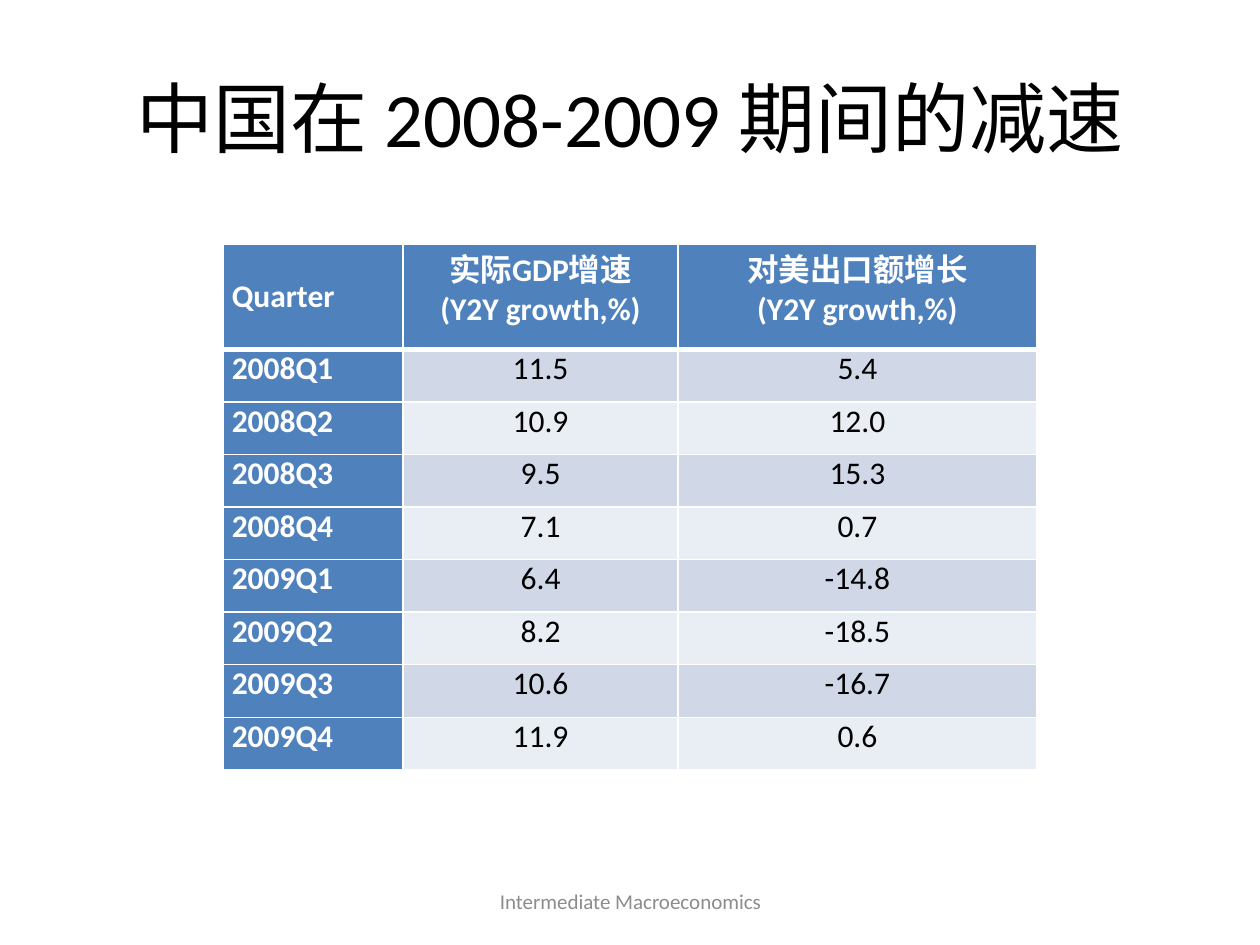
import pptx
import pptx.dml.color
import pptx.enum.text
import pptx.oxml
import pptx.oxml.ns
import pptx.util

Inches = pptx.util.Inches
Align = pptx.enum.text.PP_ALIGN
Anchor = pptx.enum.text.MSO_ANCHOR

HEADER_BLUE = "4F81BD"
BANDS = ["D0D8E8", "E9EDF4"]
WHITE = "FFFFFF"
BLACK = "000000"

HEADINGS = ["Quarter", "实际GDP增速\n(Y2Y growth,%)", "对美出口额增长\n(Y2Y growth,%)"]
GROWTH = [
    ("2008Q1", 11.5, 5.4),
    ("2008Q2", 10.9, 12.0),
    ("2008Q3", 9.5, 15.3),
    ("2008Q4", 7.1, 0.7),
    ("2009Q1", 6.4, -14.8),
    ("2009Q2", 8.2, -18.5),
    ("2009Q3", 10.6, -16.7),
    ("2009Q4", 11.9, 0.6),
]


def rgb(color):
    return pptx.dml.color.RGBColor.from_string(color)


def write_text(frame, text, size=18, color=BLACK, bold=False, align=Align.CENTER):
    """Write one paragraph for each line of the text."""
    frame.word_wrap = True
    for index, line in enumerate(text.split("\n")):
        paragraph = frame.paragraphs[0] if index == 0 else frame.add_paragraph()
        paragraph.alignment = align
        run = paragraph.add_run()
        run.text = line
        run.font.name = "Calibri"
        run.font.size = pptx.util.Pt(size)
        run.font.bold = bold
        run.font.color.rgb = rgb(color)


def add_line_of_text(slide, box, text, **text_format):
    frame = slide.shapes.add_textbox(*box).text_frame
    frame.vertical_anchor = Anchor.MIDDLE
    write_text(frame, text, **text_format)


def set_borders(cell, top=1, bottom=1):
    """Draw white cell borders; widths are in points."""
    properties = cell._tc.get_or_add_tcPr()
    for side, width in (("L", 1), ("R", 1), ("T", top), ("B", bottom)):
        properties.append(pptx.oxml.parse_xml(
            f'<a:ln{side} {pptx.oxml.ns.nsdecls("a")} w="{pptx.util.Pt(width)}">'
            f'<a:solidFill><a:srgbClr val="{WHITE}"/></a:solidFill></a:ln{side}>'))


def add_growth_table(slide, box):
    rows = [HEADINGS] + [(quarter, f"{gdp:.1f}", f"{exports:.1f}")
                         for quarter, gdp, exports in GROWTH]
    table = slide.shapes.add_table(len(rows), len(HEADINGS), *box).table
    table.first_col = True

    # The heading row is twice as high as the others
    row_height = int(box[3] / (len(rows) + 1))
    for index, row in enumerate(table.rows):
        row.height = row_height * (2 if index == 0 else 1)
    for column, width in zip(table.columns, (1.43, 2.18, 2.85)):
        column.width = Inches(width)

    for r, row in enumerate(rows):
        for c, text in enumerate(row):
            cell = table.cell(r, c)
            labelled = r == 0 or c == 0
            cell.margin_left = cell.margin_right = Inches(0.07)
            cell.margin_top = cell.margin_bottom = 0
            cell.vertical_anchor = Anchor.MIDDLE if r == c == 0 else Anchor.TOP
            set_borders(cell, top=3 if r == 1 else 1, bottom=3 if r == 0 else 1)
            cell.fill.solid()
            cell.fill.fore_color.rgb = rgb(HEADER_BLUE if labelled else BANDS[(r - 1) % 2])
            write_text(cell.text_frame, text, bold=labelled,
                       color=WHITE if labelled else BLACK,
                       align=Align.JUSTIFY if c == 0 else Align.CENTER)


def main():
    deck = pptx.Presentation()
    deck.slide_width, deck.slide_height = Inches(10), Inches(7.5)
    slide = deck.slides.add_slide(deck.slide_layouts[6])

    # Title
    add_line_of_text(slide, (Inches(0.5), Inches(0.3), Inches(9), Inches(1.25)),
                     "中国在 2008-2009 期间的减速", size=44)
    # Quarterly growth
    add_growth_table(slide, (Inches(1.77), Inches(1.94), Inches(6.46), Inches(4.17)))
    # Footer
    add_line_of_text(slide, (Inches(3.42), Inches(6.95), Inches(3.17), Inches(0.4)),
                     "Intermediate Macroeconomics", size=12, color="8C8C8C")

    deck.save("out.pptx")


if __name__ == "__main__":
    main()
